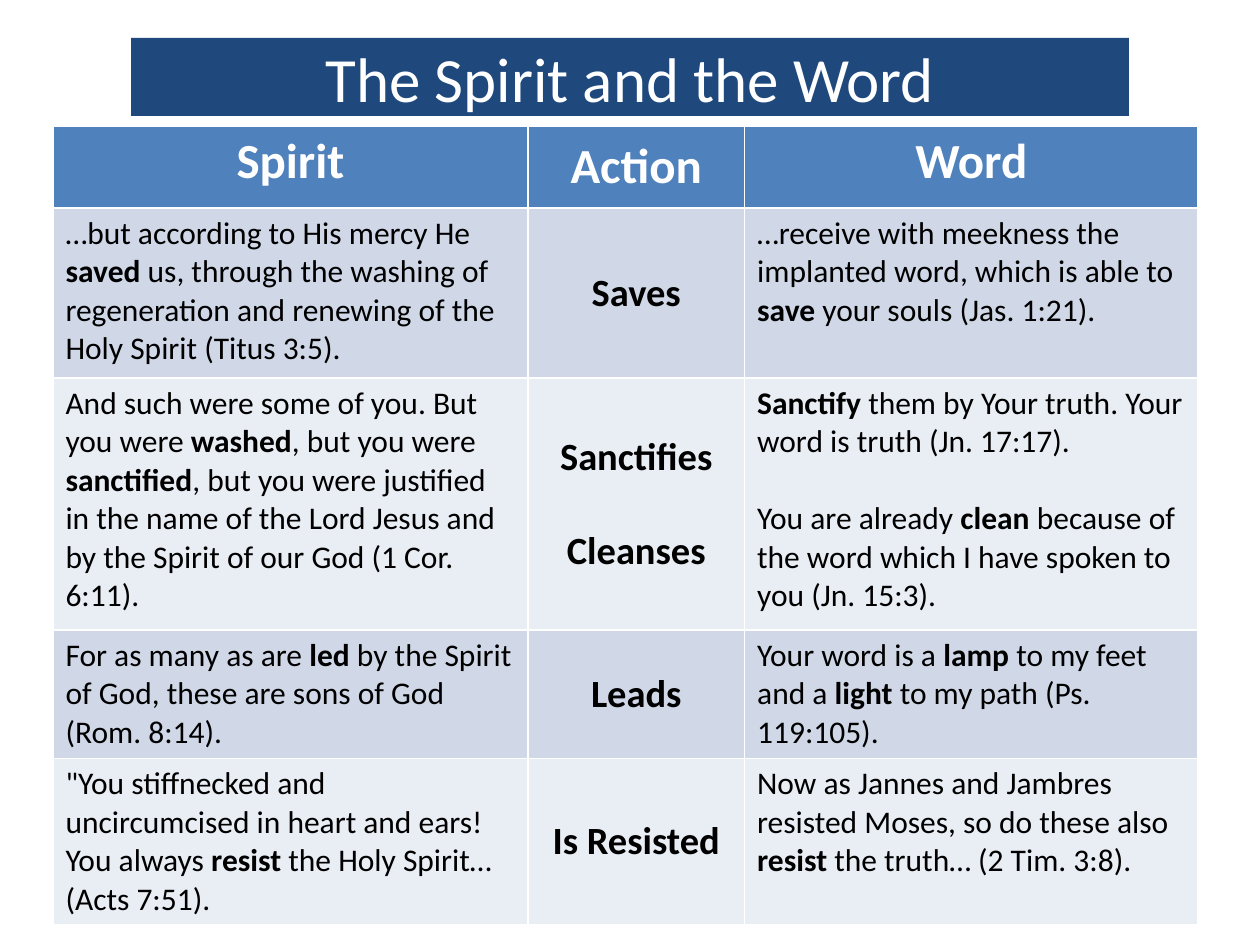
from dataclasses import dataclass

import pptx
import pptx.util
from pptx.dml.color import RGBColor
from pptx.enum.shapes import MSO_SHAPE
from pptx.enum.text import MSO_ANCHOR, PP_ALIGN
from pptx.util import Inches

NAVY = RGBColor(0x1F, 0x49, 0x7D)
BLUE = RGBColor(0x4F, 0x81, 0xBD)
BANDS = RGBColor(0xD0, 0xD8, 0xE8), RGBColor(0xE9, 0xED, 0xF4)
WHITE = RGBColor(0xFF, 0xFF, 0xFF)
BLACK = RGBColor(0, 0, 0)

COLS = 3.77, 1.72, 3.6
ROWS = 0.65, 1.35, 2, 1.02, 1.32


@dataclass
class Style:
    size: int
    color: RGBColor
    bold: bool = False
    align: PP_ALIGN = PP_ALIGN.CENTER
    gap: int = 0


@dataclass
class Verse:
    spirit: str
    action: str
    word: str


TITLE = Style(36, WHITE)
HEAD = Style(28, WHITE, bold=True)
ACTION = Style(22, BLACK, bold=True, gap=27)
QUOTE = Style(18, BLACK, align=PP_ALIGN.LEFT, gap=22)

# Asterisks enclose bold words; a line break starts a new paragraph.
VERSES = [
    Verse("…but according to His mercy He *saved* us, through the washing of "
          "regeneration and renewing of the Holy Spirit (Titus 3:5).",
          "Saves",
          "…receive with meekness the implanted word, which is able to "
          "*save* your souls (Jas. 1:21)."),
    Verse("And such were some of you. But you were *washed*, but you were "
          "*sanctified*, but you were justified in the name of the Lord Jesus "
          "and by the Spirit of our God (1 Cor. 6:11).",
          "Sanctifies\nCleanses",
          "*Sanctify* them by Your truth. Your word is truth (Jn. 17:17).\n"
          "You are already *clean* because of the word which I have spoken "
          "to you (Jn. 15:3)."),
    Verse("For as many as are *led* by the Spirit of God, these are sons of "
          "God (Rom. 8:14).",
          "Leads",
          "Your word is a *lamp* to my feet and a *light* to my path "
          "(Ps. 119:105)."),
    Verse("\"You stiffnecked and uncircumcised in heart and ears! You always "
          "*resist* the Holy Spirit… (Acts 7:51).",
          "Is Resisted",
          "Now as Jannes and Jambres resisted Moses, so do these also "
          "*resist* the truth… (2 Tim. 3:8)."),
]


def write(frame: pptx.text.text.TextFrame, text: str, style: Style) -> None:
    """Fill the frame, setting words between asterisks in bold."""
    for i, line in enumerate(text.split("\n")):
        para = frame.add_paragraph() if i else frame.paragraphs[0]
        para.alignment = style.align
        para.space_before = pptx.util.Pt(style.gap if i else 0)
        for j, part in enumerate(line.split("*")):
            if not part:
                continue
            run = para.add_run()
            run.text = part
            form = {"name": "Calibri", "size": pptx.util.Pt(style.size),
                    "bold": style.bold or j % 2 == 1}
            for key, value in form.items():
                setattr(run.font, key, value)
            run.font.color.rgb = style.color


def add_title(slide: pptx.slide.Slide, text: str) -> None:
    bar = slide.shapes.add_shape(MSO_SHAPE.RECTANGLE, Inches(1.04), Inches(0.3),
                                 Inches(7.92), Inches(0.62))
    bar.shadow.inherit = False
    bar.fill.solid()
    bar.fill.fore_color.rgb = NAVY
    bar.line.fill.background()
    bar.text_frame.vertical_anchor = MSO_ANCHOR.MIDDLE
    write(bar.text_frame, text, TITLE)


def add_grid(slide: pptx.slide.Slide, verses: list[Verse]) -> None:
    grid = slide.shapes.add_table(len(ROWS), len(COLS), Inches(0.42), Inches(1),
                                  Inches(sum(COLS)), Inches(sum(ROWS))).table
    for col, width in zip(grid.columns, COLS):
        col.width = Inches(width)
    for row, height in zip(grid.rows, ROWS):
        row.height = Inches(height)

    for r, verse in enumerate([Verse("Spirit", "Action", "Word"), *verses]):
        for c, text in enumerate((verse.spirit, verse.action, verse.word)):
            cell = grid.cell(r, c)
            cell.fill.solid()
            cell.fill.fore_color.rgb = BANDS[(r - 1) % 2] if r else BLUE
            mid = c == 1
            cell.vertical_anchor = MSO_ANCHOR.MIDDLE if mid else MSO_ANCHOR.TOP
            style = HEAD if r == 0 else ACTION if mid else QUOTE
            write(cell.text_frame, text, style)


def main() -> None:
    deck = pptx.Presentation()
    deck.slide_width, deck.slide_height = Inches(10), Inches(7.5)
    slide = deck.slides.add_slide(deck.slide_layouts[6])
    add_title(slide, "The Spirit and the Word")
    add_grid(slide, VERSES)
    deck.save("out.pptx")


if __name__ == "__main__":
    main()
